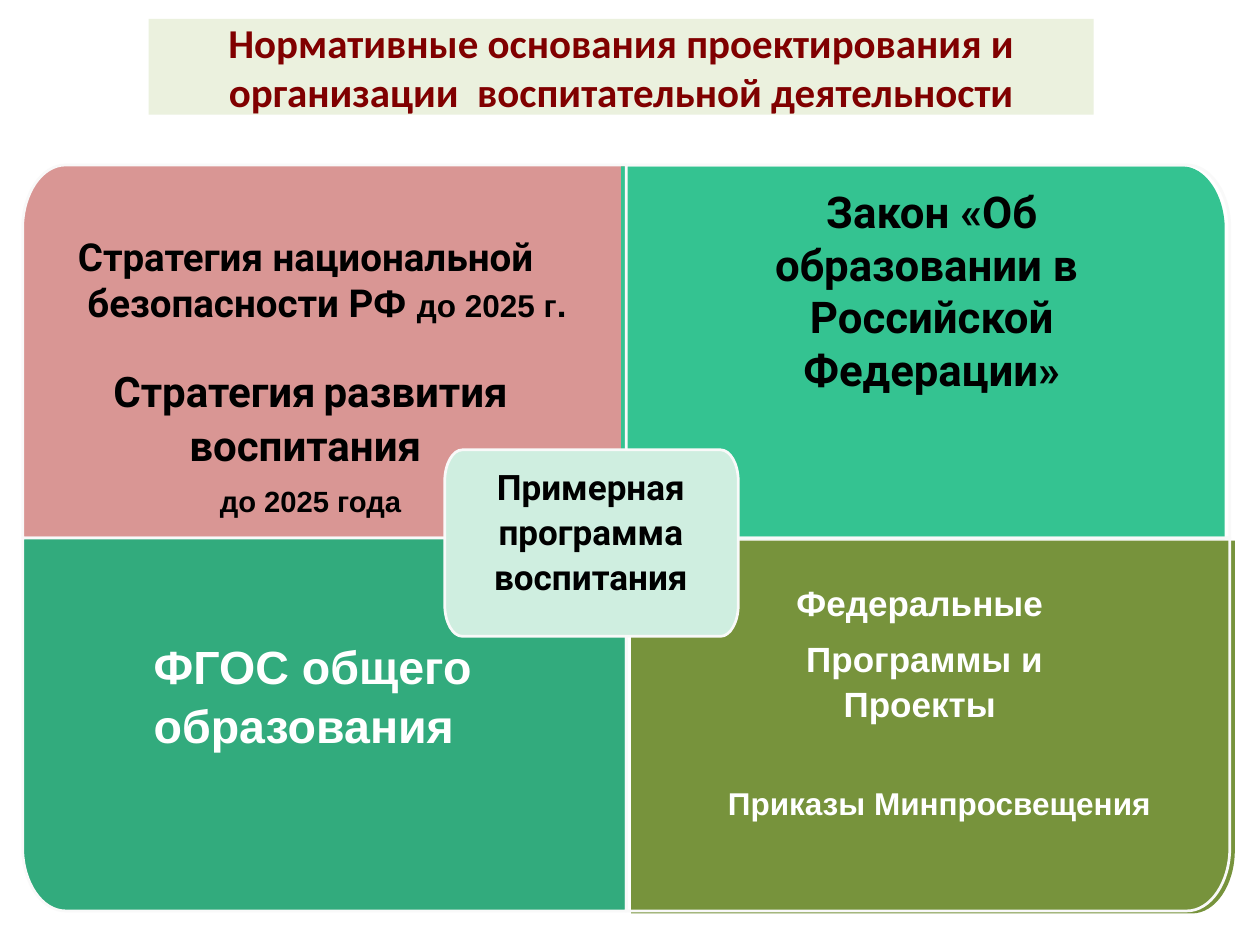
from lxml import etree
from pptx import Presentation
from pptx.dml.color import RGBColor
from pptx.enum.text import MSO_ANCHOR, PP_ALIGN
from pptx.oxml.ns import qn
from pptx.util import Inches, Pt

LEFT, CENTER = PP_ALIGN.LEFT, PP_ALIGN.CENTER
TOP, MIDDLE = MSO_ANCHOR.TOP, MSO_ANCHOR.MIDDLE
COLORS = {
    "title": "800000", "title fill": "EBF1DE", "outline": "F9F9F9",
    "rose": "D99694", "mint": "34C391", "green": "32AB7D",
    "olive": "77933C", "pale": "CFEEE0", "black": "000000", "white": "FFFFFF",
}
PANEL_SIZE, PANEL_RADII = (4.79, 2.96), (0.34, 0.5)
CENTER_SIZE, CENTER_RADII = (2.33, 1.48), (0.14, 0.25)
CURVE = 0.55  # share of the way to the corner at which a curve's handles lie


def rgb(name):
    return RGBColor.from_string(COLORS[name])


def add_panel(position, size, radii, rounded, fill=None):
    """Draw a box with elliptic corners (0 = top left, clockwise), filled or outlined."""
    (left, top), (width, height), (radius_x, radius_y) = position, size, radii
    points, curves = [], {}
    for corner in range(4):
        right, bottom = corner in (1, 2), corner in (2, 3)
        x, y = width * right, height * bottom
        if corner not in rounded:
            points.append((x, y))
            continue
        beside = (x + radius_x * (-1 if right else 1), y)
        along = (x, y + radius_y * (-1 if bottom else 1))
        ends = [beside, along] if corner % 2 else [along, beside]
        curves[len(points)] = [(end_x + CURVE * (x - end_x), end_y + CURVE * (y - end_y))
                               for end_x, end_y in ends]
        points += ends
    placed = [(Inches(left + x), Inches(top + y)) for x, y in points]
    builder = page.shapes.build_freeform(*placed[0])
    builder.add_line_segments(placed[1:], close=True)
    panel = builder.convert_to_shape()
    segments = list(panel._element.iter(qn("a:lnTo")))
    for index, handles in curves.items():
        segment = segments[index]
        segment.tag = qn("a:cubicBezTo")
        for order, (x, y) in enumerate(handles):
            handle = etree.Element(qn("a:pt"), x=str(Inches(x)), y=str(Inches(y)))
            segment.insert(order, handle)
    panel.shadow.inherit = False
    if fill:
        panel.fill.solid()
        panel.fill.fore_color.rgb = rgb(fill)
        panel.line.fill.background()
    else:
        panel.fill.background()
        panel.line.color.rgb = rgb("outline")
        panel.line.width = Pt(1.56)


deck = Presentation()
deck.slide_width, deck.slide_height = Inches(10), Inches(7.5)
page = deck.slides.add_slide(deck.slide_layouts[5])

title = page.shapes.title
title.left, title.top = Inches(1.18), Inches(0.15)
title.width, title.height = Inches(7.5), Inches(0.76)
title.fill.solid()
title.fill.fore_color.rgb = rgb("title fill")
title.text_frame.text = "Нормативные основания проектирования и организации  воспитательной деятельности"
title.text_frame.vertical_anchor = MIDDLE
heading = title.text_frame.paragraphs[0]
heading.alignment = CENTER
font = heading.runs[0].font
font.name, font.size, font.bold = "Calibri", Pt(23.4), True
font.color.rgb = rgb("title")

# fill position, outline position, size, radii, rounded corners, fill
panels = [
    ((0.18, 1.31), (0.18, 1.31), PANEL_SIZE, PANEL_RADII, [0], "rose"),
    ((4.93, 1.32), (4.97, 1.31), PANEL_SIZE, PANEL_RADII, [1], "mint"),
    ((0.18, 4.27), (0.18, 4.27), PANEL_SIZE, PANEL_RADII, [3], "green"),
    ((5.01, 4.29), (4.97, 4.27), PANEL_SIZE, PANEL_RADII, [2], "olive"),
    ((3.53, 3.57), (3.53, 3.57), CENTER_SIZE, CENTER_RADII, range(4), "pale"),
]
for fill_position, outline_position, size, radii, rounded, fill in panels:
    add_panel(fill_position, size, radii, rounded, fill)
    add_panel(outline_position, size, radii, rounded)

# box, colour, alignment, spaced lines, has insets, wraps, paragraphs of (text, size, font)
texts = [
    ((0.15, 2.87, 4.63, 1.65), "black", CENTER, True, False, True, [
        [("Стратегия", 24, "Roboto"), (" ", 18, "Roboto"), ("развития воспитания ", 24, "Roboto")],
        [("до 2025 года", 16.7, "Arial")]]),
    ((5.88, 1.47, 3.03, 0.64), "black", CENTER, False, False, True, [
        [("Закон «Об образовании в ", 25, "Roboto")],
        [("Российской Федерации»", 25, "Roboto")]]),
    ((1.22, 5.03, 3.47, 0.64), "white", LEFT, True, False, True, [
        [("ФГОС общего образования", 26.6, "Arial")]]),
    ((5.39, 6.22, 4.13, 0.64), "white", CENTER, False, False, True, [
        [("Приказы Минпросвещения", 18, "Arial")]]),
    ((3.49, 3.67, 2.4, 1.25), "black", CENTER, True, False, True, [
        [("Примерная программа воспитания", 20, "Roboto")]]),
    ((0.52, 1.8, 4.16, 0.84), "black", LEFT, False, True, False, [
        [("Стратегия национальной", 22, "Roboto")],
        [(" безопасности Р", 22, "Roboto"), ("Ф ", 22, "Arial"),
         ("до 2025 г", 18, "Arial"), (".", 20, "Arial")]]),
    ((5.6, 4.54, 3.4, 1.28), "white", CENTER, True, True, True, [
        [("Федеральные", 20, "Arial")],
        [(" Программы и Проекты", 20, "Arial")]]),
]
for place, color, alignment, spaced, has_insets, wraps, paragraphs in texts:
    box = page.shapes.add_textbox(*map(Inches, place))
    frame = box.text_frame
    frame.word_wrap = wraps
    frame.vertical_anchor = TOP
    if not has_insets:
        frame.margin_left = frame.margin_right = frame.margin_top = frame.margin_bottom = 0
    for index, spans in enumerate(paragraphs):
        para = frame.add_paragraph() if index else frame.paragraphs[0]
        para.alignment = alignment
        if spaced:
            para.line_spacing = 1.07
            para.space_after = Pt(6.7)
        for text, size, name in spans:
            span = para.add_run()
            span.text = text
            span.font.name, span.font.size, span.font.bold = name, Pt(size), True
            span.font.color.rgb = rgb(color)

deck.save("out.pptx")
